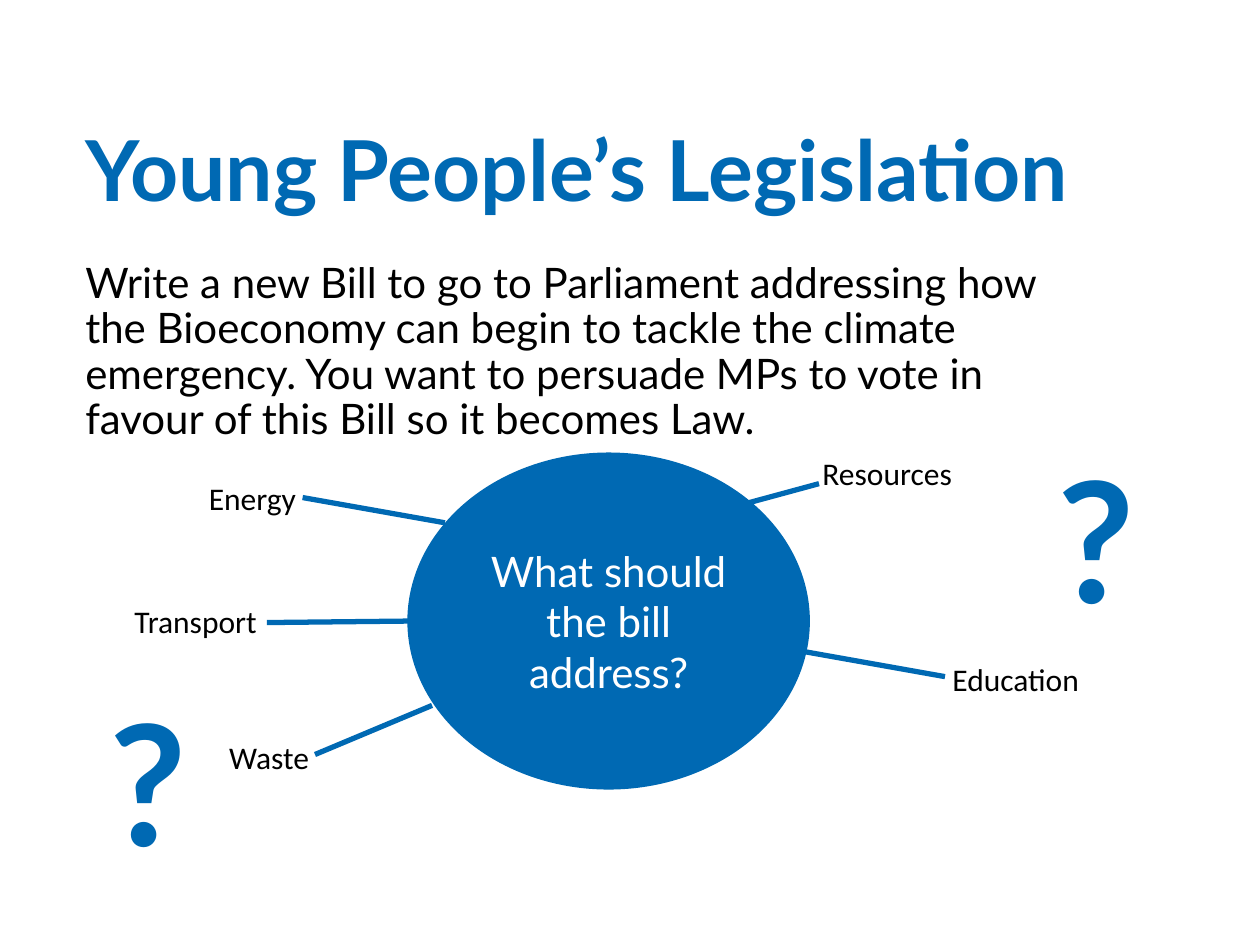
"""Build the Young People's Legislation slide with its mind map of bill topics."""
from lxml import etree
from pptx import Presentation
from pptx.dml.color import RGBColor
from pptx.enum.shapes import MSO_CONNECTOR, MSO_SHAPE
from pptx.enum.text import MSO_ANCHOR, PP_ALIGN
from pptx.oxml.ns import qn
from pptx.util import Cm, Pt

ELLIPSE, STRAIGHT = MSO_SHAPE.OVAL, MSO_CONNECTOR.STRAIGHT
TOP, MIDDLE, BOTTOM = MSO_ANCHOR.TOP, MSO_ANCHOR.MIDDLE, MSO_ANCHOR.BOTTOM
LEFT, CENTER = PP_ALIGN.LEFT, PP_ALIGN.CENTER
BLUE, BLACK, WHITE = "0069B3", "000000", "FFFFFF"

TITLE = "Young People’s Legislation"
TASK = (
    "Write a new Bill to go to Parliament addressing how the Bioeconomy can "
    "begin to tackle the climate emergency. You want to persuade MPs to vote "
    "in favour of this Bill so it becomes Law."
)
QUESTION = "What should the bill address?"
TOPICS = [
    ("Energy", (3.96, 9.53, 3.2), (6.1, 10.03, 8.97, 10.54)),
    ("Transport", (2.46, 12.01, 4.01), (5.38, 12.55, 8.23, 12.52)),
    ("Waste", (4.37, 14.76, 2.59), (6.35, 15.21, 8.71, 14.22)),
    ("Resources", (16.33, 9.02, 3.71), (15.11, 10.13, 16.51, 9.75)),
    ("Education", (18.95, 13.18, 4.22), (16.18, 13.13, 19.05, 13.64)),
]
QUESTION_MARKS = [(21.06, 8.66), (1.96, 13.56)]
TOPIC_HEIGHT = 1.02
MARK_SIZE = (1.93, 4.37)


def color(value):
    return RGBColor.from_string(value)


def write(shape, text, size, ink, font="Lato", bold=False, align=LEFT,
          anchor=TOP, spacing=1.0):
    frame = shape.text_frame
    frame.word_wrap = True
    frame.vertical_anchor = anchor
    paragraph = frame.paragraphs[0]
    paragraph.text = text
    paragraph.alignment = align
    paragraph.line_spacing = spacing
    paragraph.font.name = font
    paragraph.font.size = Pt(size)
    paragraph.font.bold = bold
    paragraph.font.color.rgb = color(ink)


def add_text(slide, box, text, size, ink, **style):
    write(slide.shapes.add_textbox(*map(Cm, box)), text, size, ink, **style)


def add_hub(slide, box):
    hub = slide.shapes.add_shape(ELLIPSE, *map(Cm, box))
    hub.shadow.inherit = False
    hub.fill.solid()
    hub.fill.fore_color.rgb = color(BLUE)
    hub.line.color.rgb = color(BLUE)
    hub.line.width = Pt(1)
    write(hub, QUESTION, 24, WHITE, align=CENTER, anchor=MIDDLE)


def add_spoke(slide, ends):
    spoke = slide.shapes.add_connector(STRAIGHT, *map(Cm, ends))
    spoke.line.color.rgb = color(BLUE)
    spoke.line.width = Pt(3)
    etree.SubElement(spoke._element.spPr, qn("a:effectLst"))


def main():
    deck = Presentation()
    deck.slide_width, deck.slide_height = Cm(25.4), Cm(19.05)
    slide = deck.slides.add_slide(deck.slide_layouts[6])

    add_text(slide, (1.47, 1.88, 21.59, 2.67), TITLE, 48, BLUE,
             bold=True, anchor=BOTTOM, spacing=0.9)
    add_text(slide, (1.47, 5.16, 20.29, 9.37), TASK, 24, BLACK, spacing=0.9)
    add_hub(slide, (8.23, 9.14, 8.08, 6.76))
    for topic, place, spoke_ends in TOPICS:
        add_text(slide, (*place, TOPIC_HEIGHT), topic, 18, BLACK, font="Calibri")
        add_spoke(slide, spoke_ends)
    for corner in QUESTION_MARKS:
        add_text(slide, (*corner, *MARK_SIZE), "?", 96, BLUE, bold=True)

    deck.save("out.pptx")


if __name__ == "__main__":
    main()
